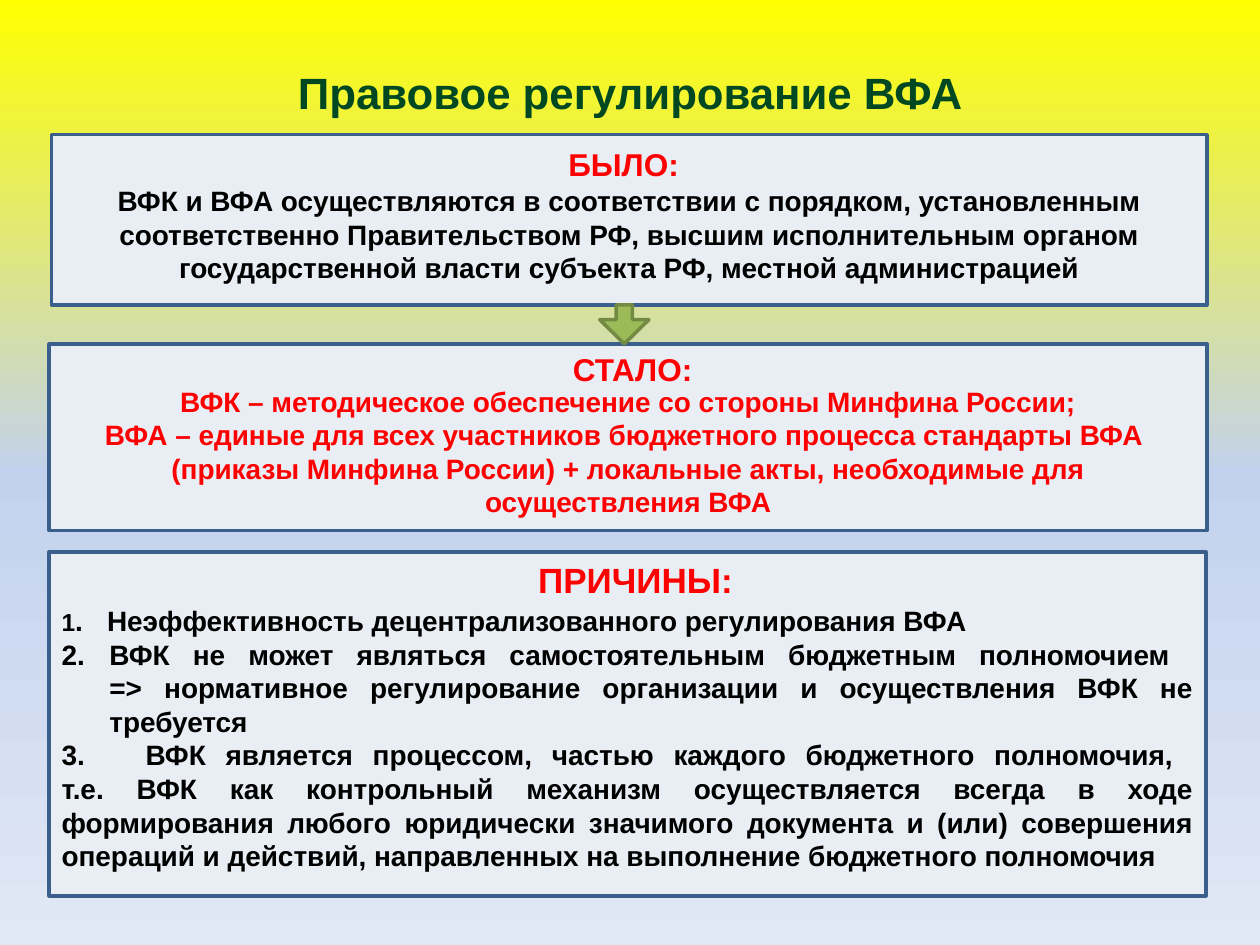
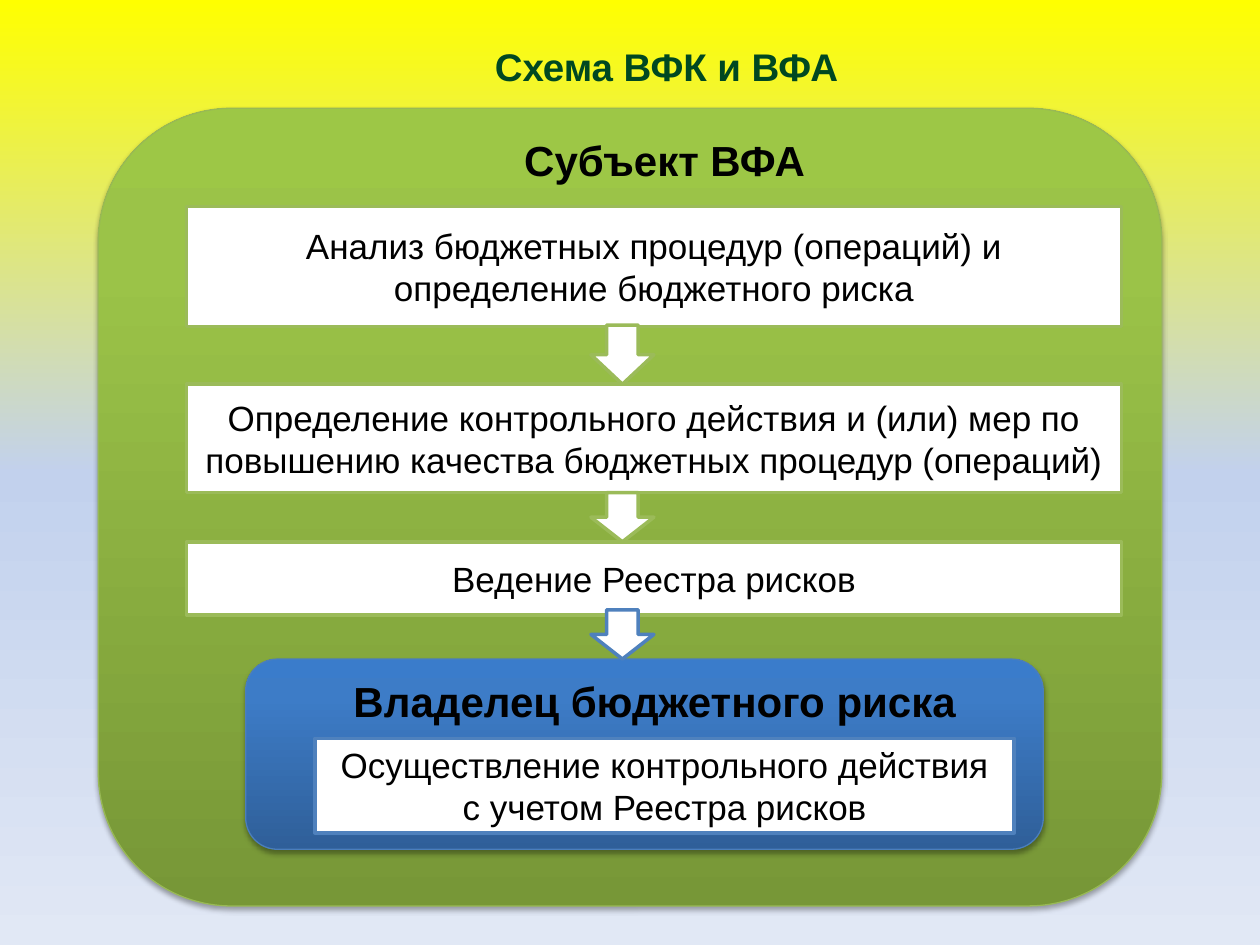
from lxml import etree
from pptx import Presentation
from pptx.dml.color import RGBColor
from pptx.enum.shapes import MSO_SHAPE
from pptx.enum.text import MSO_ANCHOR, PP_ALIGN
from pptx.oxml.ns import qn
from pptx.util import Pt

RECT, ROUND, DOWN = MSO_SHAPE.RECTANGLE, MSO_SHAPE.ROUNDED_RECTANGLE, MSO_SHAPE.DOWN_ARROW
CENTER, JUSTIFY = PP_ALIGN.CENTER, PP_ALIGN.JUSTIFY
TOP, MIDDLE = MSO_ANCHOR.TOP, MSO_ANCHOR.MIDDLE

# Shared look
FONT = "Arial"
TITLE, BLACK, RED, WHITE = "004821", "000000", "FF0000", "FFFFFF"
PANEL, PANEL_LINE = "E9EDF4", "3A5F8C"
GREEN, GREEN_LINE, BLUE = "9BBB59", "738A42", "4F81BD"
BACKGROUND = [(0, "FFFF00"), (50, "C2D1ED"), (100, "E1E8F5")]
HEADING_GAP = 16  # room kept above panel text for its heading

# Slide 1: panels with a heading over each
LAW_TITLE = "Правовое регулирование ВФА"
REASONS = [
    {"text": "1", "tail": ".\tНеэффективность децентрализованного регулирования ВФА",
     "hang": 26},
    {"text": "ВФК не может являться самостоятельным бюджетным полномочием \n"
             "=> нормативное регулирование организации и осуществления ВФК не требуется",
     "hang": 27.36, "number": 2},
    {"text": "\tВФК является процессом, частью каждого бюджетного полномочия, \n"
             "т.е. ВФК как контрольный механизм осуществляется всегда в ходе "
             "формирования любого юридически значимого документа и (или) совершения "
             "операций и действий, направленных на выполнение бюджетного полномочия",
     "hang": 0, "number": 2, "tab": 48},
]
# heading, heading size, heading box, panel box, paragraphs, colour, alignment
LAW_PANELS = [
    ("БЫЛО:", 18, (170.6, 79.2, 371.5, 28.8), (29.5, 77, 660.2, 97.2),
     [{"text": "ВФК и ВФА осуществляются в соответствии с порядком, установленным "
               "соответственно Правительством РФ, высшим исполнительным органом "
               "государственной власти субъекта РФ, местной администрацией"}],
     BLACK, CENTER),
    ("СТАЛО:", 18, (196.6, 196.6, 329.8, 28.8), (28.1, 196.6, 661.7, 106.6),
     [{"text": "ВФК – методическое обеспечение со стороны Минфина России;"},
      {"text": "ВФА – единые для всех участников бюджетного процесса стандарты ВФА \n"
               "(приказы Минфина России) + локальные акты, необходимые для "
               "осуществления ВФА"}],
     RED, CENTER),
    ("ПРИЧИНЫ:", 20, (253.4, 315.4, 219.6, 31.7), (28.1, 315.4, 661, 196.6),
     REASONS, BLACK, JUSTIFY),
]
LAW_ARROW = (342.7, 174.2, 28.1, 22.3)

# Slide 2: two roles, their steps and the arrows between
SCHEME_TITLE = "Схема ВФК и ВФА"
STEP_X, STEP_W = 106.6, 534.2
ROLES = [
    {"name": "Субъект ВФА", "name_box": (264.2, 73.4, 231.1, 36),
     "box": (56.2, 61.9, 607.7, 455.8), "line": "98B955", "step_line": GREEN,
     "fill": [(0, "779737"), (80, "9BC348"), (100, "9DC746")],
     "steps": [
         ("Анализ бюджетных процедур (операций) и определение бюджетного риска",
          (STEP_X, 118.1, STEP_W, 68.4)),
         ("Определение контрольного действия и (или) мер по повышению качества "
          "бюджетных процедур (операций)", (STEP_X, 219.6, STEP_W, 61.9)),
         ("Ведение Реестра рисков", (STEP_X, 309.6, STEP_W, 41.8))]},
    {"name": "Владелец бюджетного риска", "name_box": (185.8, 382.3, 376.6, 36),
     "box": (140.4, 376.6, 455.8, 108.7), "line": "4B7EBC", "step_line": BLUE,
     "fill": [(0, "2F5F99"), (80, "3D7CC7"), (100, "3A7CCB")],
     "steps": [("Осуществление контрольного действия с учетом Реестра рисков",
                (180, 421.9, 399.6, 54))]},
]
ARROW_X, ARROW_W = 337.7, 36
ARROWS = [(185.8, 33.8, GREEN), (281.5, 28.1, GREEN), (348.5, 28.1, BLUE)]


def rgb(color):
    return RGBColor.from_string(color)


def points(box):
    return [Pt(v) for v in box]


def sub(parent, tag, **attrs):
    return etree.SubElement(parent, qn(tag), {k: str(v) for k, v in attrs.items()})


def set_gradient(fill, holder, stops, angle):
    """Replace a solid fill with a linear gradient of several stops."""
    fill.solid()
    grad = etree.Element(qn("a:gradFill"), rotWithShape="1")
    gs_list = sub(grad, "a:gsLst")
    for pos, color in stops:
        sub(sub(gs_list, "a:gs", pos=pos * 1000), "a:srgbClr", val=color)
    sub(grad, "a:lin", ang=angle * 60000, scaled=0)
    holder.replace(holder.find(qn("a:solidFill")), grad)


def style(p, size, color, bold=False, align=CENTER):
    p.alignment = align
    p.font.name, p.font.size, p.font.bold = FONT, Pt(size), bold
    p.font.color.rgb = rgb(color)


def add_heading(s, text, box, size, color):
    tf = s.shapes.add_textbox(*points(box)).text_frame
    tf.word_wrap = True
    tf.text = text
    style(tf.paragraphs[0], size, color, True)


def add_box(s, kind, box, fill, line, width=2.0):
    sp = s.shapes.add_shape(kind, *points(box))
    sp.shadow.inherit = False
    if isinstance(fill, list):
        set_gradient(sp.fill, sp.element.spPr, fill, 270)
    else:
        sp.fill.solid()
        sp.fill.fore_color.rgb = rgb(fill)
    sp.line.color.rgb = rgb(line)
    sp.line.width = Pt(width)
    sp.text_frame.vertical_anchor = MIDDLE
    return sp


def add_shadow(sp):
    shadow = sub(sp.element.spPr.find(qn("a:effectLst")), "a:outerShdw", dir=90 * 60000,
                 blurRad=Pt(3.1), dist=Pt(1.8), rotWithShape=0)
    sub(sub(shadow, "a:srgbClr", val=BLACK), "a:alpha", val=35000)


def fill_text(tf, items, size, color, bold=False, align=CENTER):
    for i, item in enumerate(items):
        p = tf.paragraphs[0] if i == 0 else tf.add_paragraph()
        p.text = item["text"]
        p_pr = p._p.get_or_add_pPr()
        if "hang" in item:
            p_pr.set("marL", str(Pt(item["hang"])))
            p_pr.set("indent", str(-Pt(item["hang"])))
        if "number" in item:
            sub(p_pr, "a:buFont", typeface="+mj-lt")
            sub(p_pr, "a:buAutoNum", type="arabicPeriod", startAt=item["number"])
        if "tab" in item:
            sub(sub(p_pr, "a:tabLst"), "a:tab", pos=Pt(item["tab"]), algn="l")
        style(p, size, color, bold, align)
        if "tail" in item:
            p.runs[0].font.size = Pt(size - 2)
            p.add_run().text = item["tail"]


def new_slide(prs, title, box, size):
    s = prs.slides.add_slide(prs.slide_layouts[5])
    sp = s.shapes.title
    sp.left, sp.top, sp.width, sp.height = points(box)
    sp.text_frame.text = title
    sp.text_frame.vertical_anchor = TOP
    style(sp.text_frame.paragraphs[0], size, TITLE, True)
    return s


def build_law(prs):
    s = new_slide(prs, LAW_TITLE, (0, 33.8, 720, 37.4), 25)
    for heading, size, heading_box, box, items, color, align in LAW_PANELS:
        tf = add_box(s, RECT, box, PANEL, PANEL_LINE).text_frame
        tf.margin_top = Pt(3.6 + HEADING_GAP)
        fill_text(tf, items, 16, color, True, align)
        add_heading(s, heading, heading_box, size, RED)
    arrow = add_box(s, DOWN, LAW_ARROW, GREEN, GREEN_LINE)
    arrow.adjustments[0], arrow.adjustments[1] = 0.33, 0.62


def build_scheme(prs):
    s = new_slide(prs, SCHEME_TITLE, (114.5, 19.4, 532.8, 33.8), 22)
    s.shapes.title.text_frame.paragraphs[0].line_spacing = Pt(28)
    for role in ROLES:
        add_shadow(add_box(s, ROUND, role["box"], role["fill"], role["line"], 0.75))
        add_heading(s, role["name"], role["name_box"], 24, BLACK)
        for text, box in role["steps"]:
            sp = add_box(s, RECT, box, WHITE, role["step_line"])
            fill_text(sp.text_frame, [{"text": text}], 20, BLACK)
    for top, height, line in ARROWS:
        add_box(s, DOWN, (ARROW_X, top, ARROW_W, height), WHITE, line)


def main():
    prs = Presentation()
    prs.slide_width, prs.slide_height = Pt(720), Pt(540)
    master = prs.slide_master
    fill = master.background.fill
    fill.solid()
    set_gradient(fill, master.element.find(".//" + qn("p:bgPr")), BACKGROUND, 90)
    build_law(prs)
    build_scheme(prs)
    prs.save("out.pptx")


if __name__ == "__main__":
    main()
